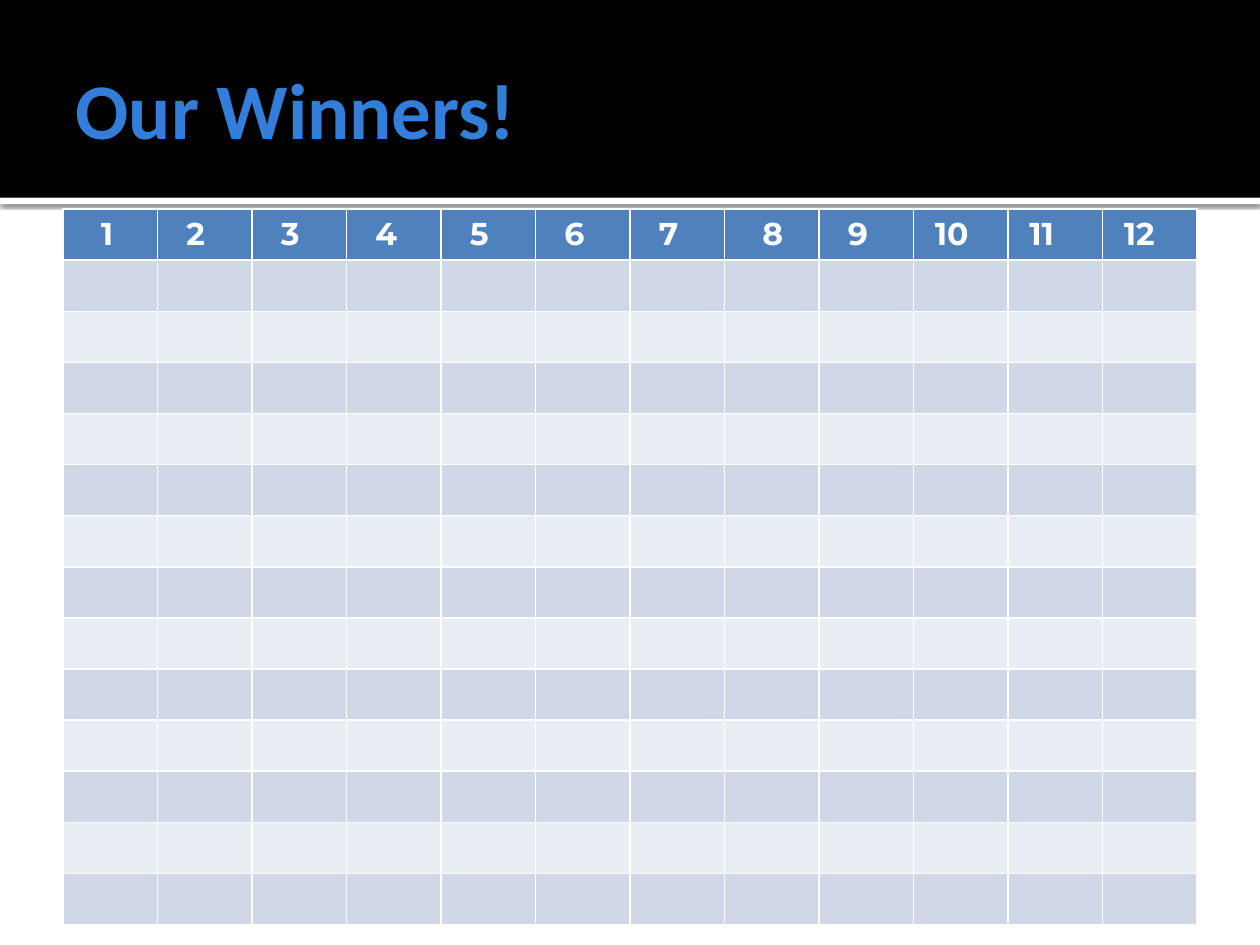
from lxml.etree import SubElement as Sub
from pptx import Presentation
from pptx.dml.color import RGBColor
from pptx.enum.shapes import MSO_SHAPE as Kind
from pptx.enum.text import MSO_ANCHOR as Anchor, PP_ALIGN as Align
from pptx.oxml.ns import qn
from pptx.util import Inches, Pt


def paint(fill, tone):
    fill.solid()
    fill.fore_color.rgb = RGBColor.from_string(tone)


def style(run, tone, **look):
    for name, value in look.items():
        setattr(run.font, name, value)
    run.font.color.rgb = RGBColor.from_string(tone)


deck = Presentation()
deck.slide_width, deck.slide_height = Inches(10), Inches(7.5)
slide = deck.slides.add_slide(deck.slide_layouts[5])
shapes = slide.shapes
paint(slide.background.fill, "FFFFFF")

# Header bands: white strip with a soft shadow, then the black banner
for top, high, tone in [(1.57, 0.05, "FFFFFF"), (0, 1.57, "000000")]:
    band = shapes.add_shape(Kind.RECTANGLE, 0, Inches(top), Inches(10), Inches(high))
    band.shadow.inherit = False
    paint(band.fill, tone)
    band.line.fill.background()
    if tone == "FFFFFF":
        glow = band._element.spPr.find(qn("a:effectLst"))
        cast = Sub(glow, qn("a:outerShdw"), blurRad=str(Pt(2.5)),
                   dist=str(Pt(0.8)), dir="5400000", algn="tl", rotWithShape="0")
        ink = Sub(cast, qn("a:srgbClr"), val="000000")
        Sub(ink, qn("a:alpha"), val="60000")

# Title, raised above the bands
title = shapes.title
shapes._spTree.append(title._element)
place = {"left": 0.5, "top": 0.17, "width": 9, "height": 1.37}
for name, value in place.items():
    setattr(title, name, Inches(value))
frame = title.text_frame
frame.text = "Our Winners!"
frame.vertical_anchor = Anchor.MIDDLE
inset = {"left": 0.1, "top": 0.05, "right": 0.05, "bottom": 0.05}
for side, value in inset.items():
    setattr(frame, f"margin_{side}", Inches(value))
line = frame.paragraphs[0]
line.alignment = Align.LEFT
style(line.runs[0], "337ED9", name="Calibri", size=Pt(45), bold=True)

# Winners grid: the table style supplies the white rules
rows, cols = 14, 12
grid = shapes.add_table(rows, cols, Inches(0.5), Inches(1.66),
                        Inches(9), Inches(5.68)).table
for r in range(rows):
    tone = "4F81BD" if r == 0 else ("E9EDF4", "D0D8E8")[r % 2]
    for cell in grid.rows[r].cells:
        paint(cell.fill, tone)

# Column numbers; two digits start further left, 1 and 8 further right
for num, cell in enumerate(grid.rows[0].cells, 1):
    cell.text = str(num)
    indent = 0.17 if num > 9 else 0.3 if num in (1, 8) else 0.23
    cell.margin_left = Inches(indent)
    style(cell.text_frame.paragraphs[0].runs[0], "FFFFFF",
          name="Montserrat", size=Pt(18), bold=True)

deck.save("out.pptx")
